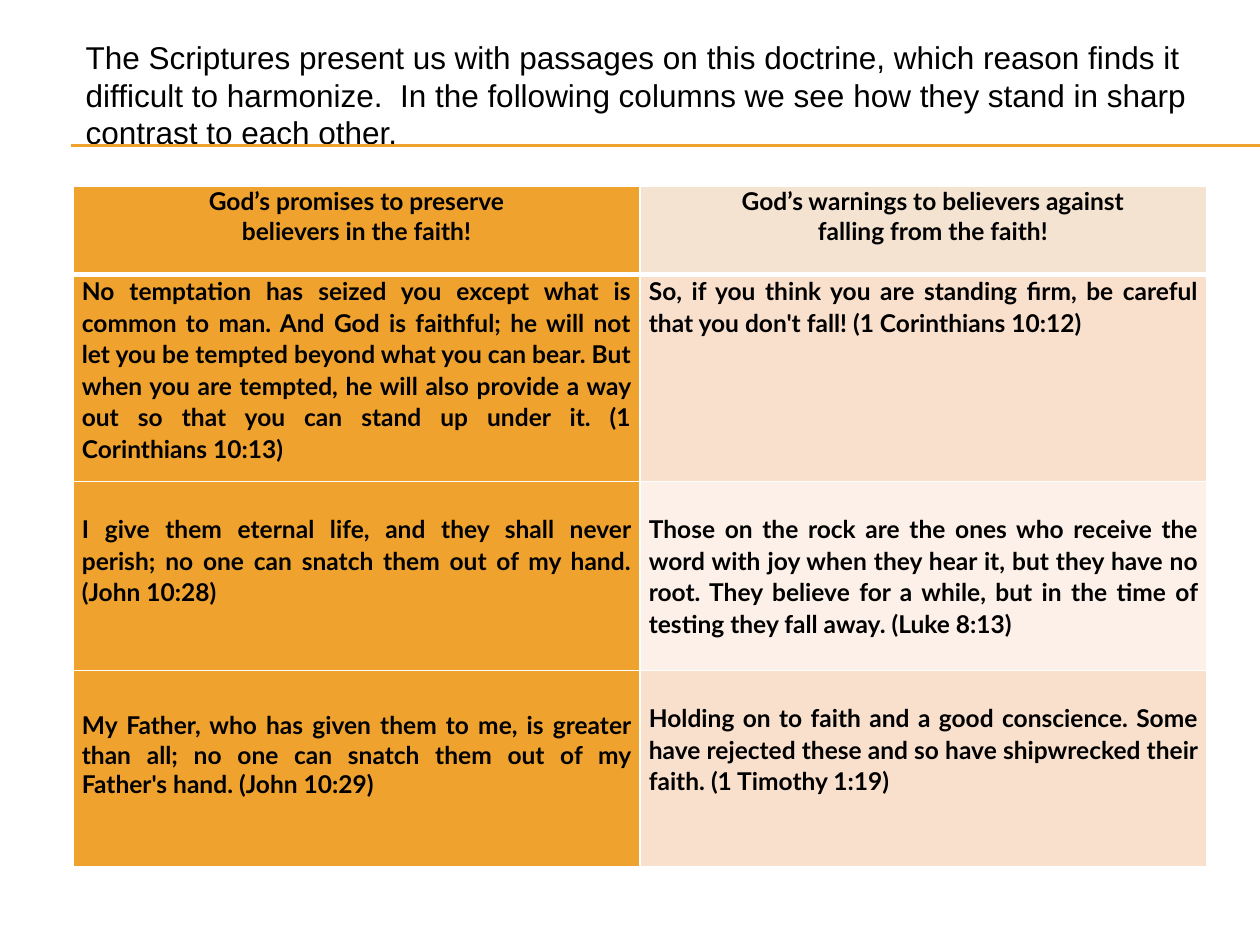
from lxml import etree
from pptx import Presentation
from pptx.dml import color
from pptx.enum import shapes, text
from pptx.oxml import ns
from pptx.util import Inches, Pt

COLORS = {
    "black": "000000", "white": "FFFFFF", "gold": "F0A22E",
    "sand": "F5E3D1", "peach": "F9E0CD", "cream": "FCF0E8",
}
CENTER = text.PP_ALIGN.CENTER
JUSTIFY = text.PP_ALIGN.JUSTIFY

HEADERS = [
    ["God’s promises to preserve", "believers in the faith!"],
    ["God’s warnings to believers against", "falling from the faith!"],
]
PASSAGES = [
    ["No temptation has seized you except what is common to man. And God is "
     "faithful; he will not let you be tempted beyond what you can bear. But "
     "when you are tempted, he will also provide a way out so that you can "
     "stand up under it. (1 Corinthians 10:13)",
     "So, if you think you are standing firm, be careful that you don't fall! "
     "(1 Corinthians 10:12)"],
    ["I give them eternal life, and they shall never perish; no one can "
     "snatch them out of my hand. (John 10:28)",
     "Those on the rock are the ones who receive the word with joy when they "
     "hear it, but they have no root. They believe for a while, but in the "
     "time of testing they fall away. (Luke 8:13)"],
    ["My Father, who has given them to me, is greater than all; no one can "
     "snatch them out of my Father's hand. (John 10:29)",
     "Holding on to faith and a good conscience. Some have rejected these and "
     "so have shipwrecked their faith. (1 Timothy 1:19)"],
]


def rgb(name):
    return color.RGBColor.from_string(COLORS[name])


def write(frame, lines, size=14, font="Lato", bold=True, align=None, spacing=1.0):
    for index, line in enumerate(lines):
        para = frame.paragraphs[0] if index == 0 else frame.add_paragraph()
        para.alignment = align
        para.line_spacing = spacing
        span = para.add_run()
        span.text = line
        span.font.size = Pt(size)
        span.font.name = font
        span.font.bold = bold
        span.font.color.rgb = rgb("black")


class Page:
    def __init__(self, deck):
        self.slide = deck.slides.add_slide(deck.slide_layouts[5])

    def rule(self, y):
        line = self.slide.shapes.add_connector(
            shapes.MSO_CONNECTOR.STRAIGHT, Inches(0.56), Inches(y), Inches(10), Inches(y))
        line.line.color.rgb = rgb("gold")
        line.line.width = Pt(0.75)
        etree.SubElement(line._element.spPr, ns.qn("a:effectLst"))

    def title(self, words, left, top, width, height):
        box = self.slide.shapes.title
        box.left, box.top, box.width, box.height = map(Inches, (left, top, width, height))
        frame = box.text_frame
        frame.word_wrap = True
        frame.auto_size = text.MSO_AUTO_SIZE.NONE
        frame.vertical_anchor = text.MSO_ANCHOR.TOP
        frame.margin_left = frame.margin_right = Inches(0.1)
        frame.margin_top, frame.margin_bottom = Inches(0.03), 0
        write(frame, [words], size=18, font="Arial", bold=False, align=text.PP_ALIGN.LEFT)

    def table(self, left, top, widths, heights):
        grid = self.slide.shapes.add_table(
            len(heights), len(widths), Inches(left), Inches(top),
            Inches(sum(widths)), Inches(sum(heights))).table
        for column, width in zip(grid.columns, widths):
            column.width = Inches(width)
        for row, height in zip(grid.rows, heights):
            row.height = Inches(height)
        return grid

    def cell(self, cell, lines, fill, borders, left=0.07, top=0, **style):
        cell.margin_left, cell.margin_right = Inches(left), Inches(0.07)
        cell.margin_top, cell.margin_bottom = Inches(top), 0
        write(cell.text_frame, lines, **style)
        properties = cell._tc.get_or_add_tcPr()
        for side, width in zip("LRTB", borders):
            edge = etree.SubElement(properties, ns.qn("a:ln" + side), w=str(Pt(width)))
            paint = etree.SubElement(edge, ns.qn("a:solidFill"))
            etree.SubElement(paint, ns.qn("a:srgbClr"), val=COLORS["white"])
        cell.fill.solid()
        cell.fill.fore_color.rgb = rgb(fill)


def main():
    deck = Presentation()
    deck.slide_width, deck.slide_height = Inches(10), Inches(7.5)
    page = Page(deck)
    for y in (1.15, 1.16):
        page.rule(y)
    page.title(
        "The Scriptures present us with passages on this doctrine, which reason "
        "finds it difficult to harmonize.  In the following columns we see how "
        "they stand in sharp contrast to each other.", 0.58, 0.27, 9.08, 1.21)

    grid = page.table(0.58, 1.48, [4.5, 4.5], [0.7, 1.64, 1.5, 1.56])
    for column, (lines, fill, left) in enumerate(zip(HEADERS, ("gold", "sand"), (0.07, 0.22))):
        page.cell(grid.cell(0, column), lines, fill, (1, 1, 1, 3), left=left, align=CENTER)

    tops = [(0, 0), (0.25, 0.25), (0.32, 0.25)]
    for row, (passages, insets) in enumerate(zip(PASSAGES, tops), start=1):
        fills = ("gold", "peach" if row % 2 else "cream")
        borders = (1, 1, 3 if row == 1 else 1, 1)
        for column, (passage, fill, top) in enumerate(zip(passages, fills, insets)):
            spacing = 1.0 if (row, column) == (3, 0) else 1.07
            page.cell(grid.cell(row, column), [passage], fill, borders,
                      top=top, align=JUSTIFY, spacing=spacing)
    deck.save("out.pptx")


if __name__ == "__main__":
    main()
